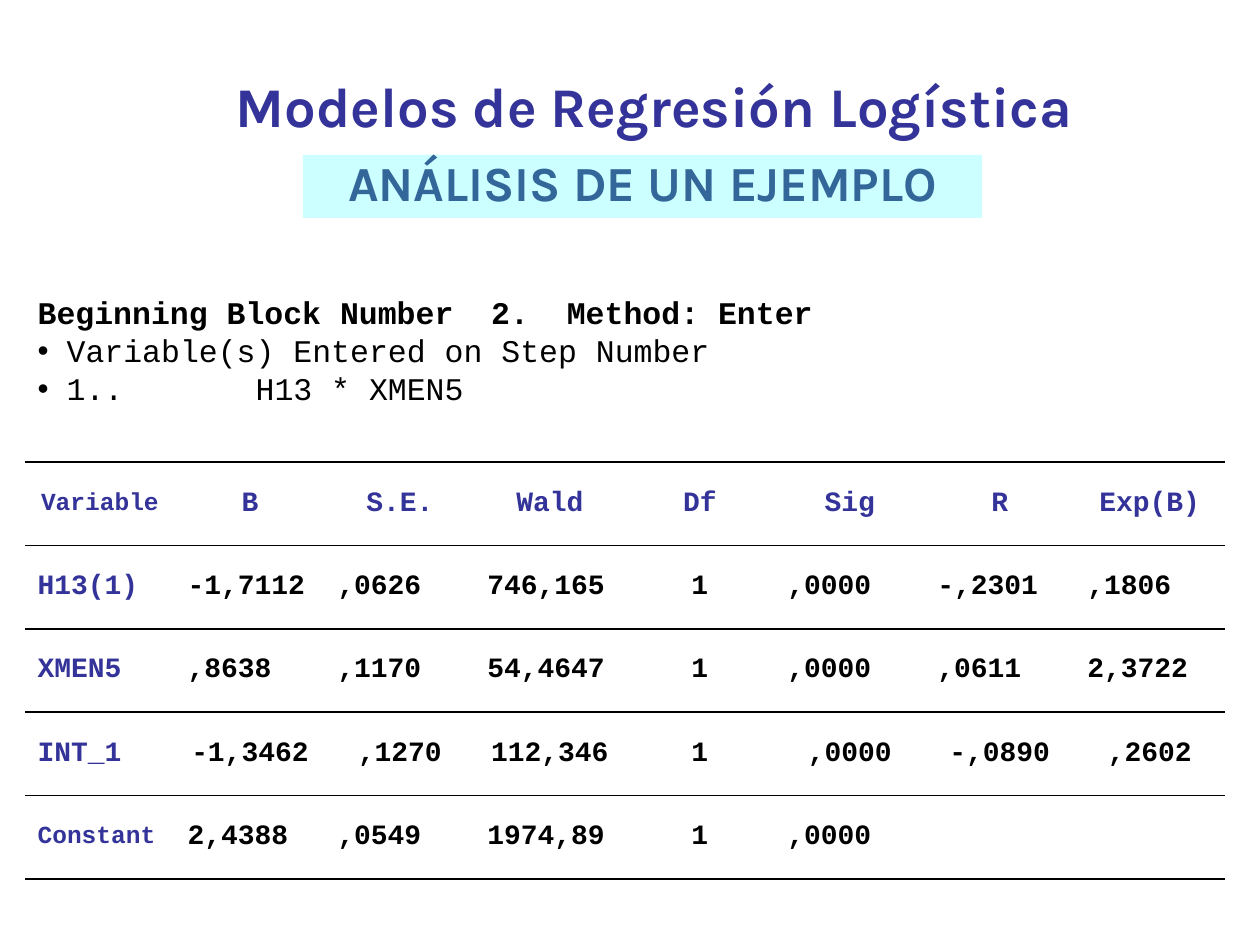
"""Build the logistic regression example slide."""
import dataclasses

import lxml.etree
import pptx
import pptx.dml.color
import pptx.enum.shapes
import pptx.enum.text
import pptx.oxml.ns
import pptx.util

ALIGN = pptx.enum.text.PP_ALIGN
ANCHOR = pptx.enum.text.MSO_ANCHOR
EMU_PER_PX = 914400 / 126


@dataclasses.dataclass(frozen=True)
class Theme:
    heading_font: str = "Karla"
    mono_font: str = "Courier New"
    indigo: str = "333399"
    steel: str = "336699"
    pale_cyan: str = "CCFFFF"
    ink: str = "000000"
    title_size: int = 32
    subtitle_size: int = 28
    body_size: int = 18
    cell_size: int = 16
    label_size: int = 14
    border_width: int = 1


THEME = Theme()
HEADERS = ["Variable", "B", "S.E.", "Wald", "Df", "Sig", "R", "Exp(B)"]
ESTIMATES = [
    ["H13(1)", "-1,7112", ",0626", "746,165", "1", ",0000", "-,2301", ",1806"],
    ["XMEN5", ",8638", ",1170", "54,4647", "1", ",0000", ",0611", "2,3722"],
    ["INT_1", "-1,3462", ",1270", "112,346", "1", ",0000", "-,0890", ",2602"],
    ["Constant", "2,4388", ",0549", "1974,89", "1", ",0000", "", ""],
]
SMALL_LABELS = ("Variable", "Constant")
CENTERED_ROWS = (0, 3)
DF_COLUMN = HEADERS.index("Df")


def px(length):
    return pptx.util.Emu(round(length * EMU_PER_PX))


def rgb(color):
    return pptx.dml.color.RGBColor.from_string(color)


def add_xml(parent, tag, **attributes):
    names = {name: str(value) for name, value in attributes.items()}
    return lxml.etree.SubElement(parent, pptx.oxml.ns.qn(tag), names)


def place(shape, left, top, width, height):
    shape.left, shape.top = px(left), px(top)
    shape.width, shape.height = px(width), px(height)


def style_paragraph(para, font, size, color, bold=True, align=ALIGN.LEFT):
    para.alignment = align
    para.font.name = font
    para.font.size = pptx.util.Pt(size)
    para.font.bold = bold
    para.font.color.rgb = rgb(color)


def fill_title(title, text):
    place(title, 223, 66, 910, 79)
    frame = title.text_frame
    frame.text = text
    frame.word_wrap = False
    frame.auto_size = pptx.enum.text.MSO_AUTO_SIZE.NONE
    style_paragraph(frame.paragraphs[0], THEME.heading_font,
                    THEME.title_size, THEME.indigo)


def add_subtitle_band(slide, text):
    band = slide.shapes.add_shape(pptx.enum.shapes.MSO_SHAPE.RECTANGLE,
                                  px(303), px(155), px(679), px(63))
    band.shadow.inherit = False
    band.fill.solid()
    band.fill.fore_color.rgb = rgb(THEME.pale_cyan)
    band.line.fill.background()
    frame = band.text_frame
    frame.text = text
    frame.word_wrap = False
    frame.vertical_anchor = ANCHOR.TOP
    para = frame.paragraphs[0]
    para.line_spacing = 0.85
    style_paragraph(para, THEME.heading_font, THEME.subtitle_size,
                    THEME.steel, align=ALIGN.CENTER)


def set_bullet(para, tab_stop):
    properties = para._p.get_or_add_pPr()
    properties.set("marL", str(px(29)))
    properties.set("indent", str(-px(29)))
    add_xml(properties, "a:buFont", typeface="Arial")
    add_xml(properties, "a:buChar", char="•")
    tabs = add_xml(properties, "a:tabLst")
    add_xml(tabs, "a:tab", pos=px(tab_stop), algn="l")


def set_plain(para):
    properties = para._p.get_or_add_pPr()
    properties.set("marL", "0")
    properties.set("indent", "0")
    add_xml(properties, "a:buNone")


def fill_steps(body, heading, items):
    place(body, 25, 283, 1191, 126)
    frame = body.text_frame
    frame.text = "\n".join([heading, *items])
    frame.word_wrap = True
    frame.auto_size = pptx.enum.text.MSO_AUTO_SIZE.NONE
    frame.vertical_anchor = ANCHOR.TOP
    frame.margin_top = px(10)
    for index, para in enumerate(frame.paragraphs):
        para.line_spacing = px(38)
        para.space_before = pptx.util.Pt(0)
        if index:
            set_bullet(para, 218)
        else:
            set_plain(para)
        style_paragraph(para, THEME.mono_font, THEME.body_size, THEME.ink,
                        bold=index == 0)


def set_borders(cell):
    properties = cell._tc.get_or_add_tcPr()
    for side in ("a:lnL", "a:lnR"):
        add_xml(add_xml(properties, side, w=0), "a:noFill")
    for side in ("a:lnT", "a:lnB"):
        line = add_xml(properties, side, w=pptx.util.Pt(THEME.border_width))
        add_xml(add_xml(line, "a:solidFill"), "a:srgbClr", val=THEME.ink)


def fill_cell(cell, text, row, column):
    cell.text = text
    cell.vertical_anchor = ANCHOR.MIDDLE
    set_borders(cell)
    cell.fill.background()
    size = THEME.label_size if text in SMALL_LABELS else THEME.cell_size
    color = THEME.indigo if row == 0 or column == 0 else THEME.ink
    centered = (row == 0 or column == DF_COLUMN
                or (row in CENTERED_ROWS and column > 0))
    style_paragraph(cell.text_frame.paragraphs[0], THEME.mono_font, size, color,
                    align=ALIGN.CENTER if centered else ALIGN.LEFT)


def add_estimates_table(slide):
    rows = [HEADERS, *ESTIMATES]
    frame = slide.shapes.add_table(len(rows), len(HEADERS),
                                   px(25), px(462), px(1200), px(417))
    table = frame.table
    table.first_row = False
    table.horz_banding = False
    for row, values in enumerate(rows):
        for column, text in enumerate(values):
            fill_cell(table.cell(row, column), text, row, column)


def main():
    deck = pptx.Presentation()
    deck.slide_width, deck.slide_height = px(1260), px(945)
    slide = deck.slides.add_slide(deck.slide_layouts[1])
    fill_title(slide.shapes.title, "Modelos de Regresión Logística")
    add_subtitle_band(slide, "ANÁLISIS DE UN EJEMPLO")
    add_estimates_table(slide)
    fill_steps(slide.placeholders[1], "Beginning Block Number  2.  Method: Enter",
               ["Variable(s) Entered on Step Number", "1..\tH13 * XMEN5"])
    deck.save("out.pptx")


if __name__ == "__main__":
    main()
